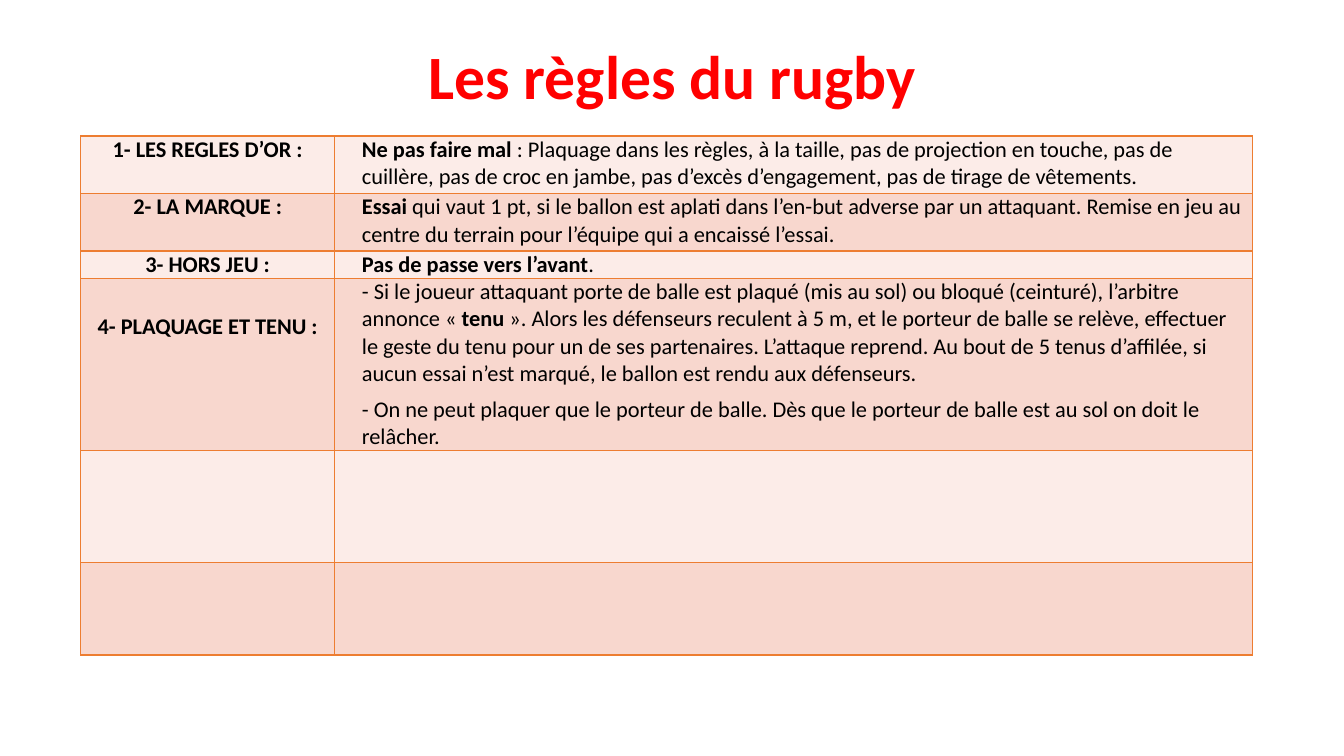
from lxml.etree import SubElement as add_element
from pptx import Presentation
from pptx.dml.color import RGBColor
from pptx.enum.text import MSO_ANCHOR as Anchor, PP_ALIGN as Align
from pptx.oxml.ns import qn
from pptx.util import Pt

PX = 9144
FONT = "Calibri"
COLORS = {
    "title": "FF0000",
    "text": "000000",
    "border": "ED7D31",
    "light": "FCECE8",
    "dark": "F8D7CE",
}
COLUMN_WIDTHS = [252, 910]
ROW_HEIGHTS = [57, 57, 27, 171, 111, 92]
TENU_ROW = 3
RULES = [
    ("1- LES REGLES D’OR :", [
        "**Ne pas faire mal** : Plaquage dans les règles, à la taille, pas de projection "
        "en touche, pas de cuillère, pas de croc en jambe, pas d’excès d’engagement, "
        "pas de tirage de vêtements."]),
    ("2- LA MARQUE :", [
        "**Essai** qui vaut 1 pt, si le ballon est aplati dans l’en-but adverse par un "
        "attaquant. Remise en jeu au centre du terrain pour l’équipe qui a encaissé l’essai."]),
    ("3- HORS JEU :", ["**Pas de passe vers l’avant**."]),
    ("4- PLAQUAGE ET TENU :", [
        "- Si le joueur attaquant porte de balle est plaqué (mis au sol) ou bloqué "
        "(ceinturé), l’arbitre annonce « **tenu** ». Alors les défenseurs reculent à 5 m, "
        "et le porteur de balle se relève, effectuer le geste du tenu pour un de ses "
        "partenaires. L’attaque reprend. Au bout de 5 tenus d’affilée, si aucun essai "
        "n’est marqué, le ballon est rendu aux défenseurs.",
        "- On ne peut plaquer que le porteur de balle. Dès que le porteur de balle est au "
        "sol on doit le relâcher."]),
]


def color(name):
    """Return the named colour."""
    return RGBColor.from_string(COLORS[name])


def add_runs(paragraph, marked_text, size, color_name):
    """Fill a paragraph, with bold between double asterisks."""
    for index, part in enumerate(marked_text.split("**")):
        if part:
            run = paragraph.add_run()
            run.text = part
            run.font.name = FONT
            run.font.size = Pt(size)
            run.font.bold = index % 2 == 1
            run.font.color.rgb = color(color_name)


def add_title(slide, text):
    """Add the centred slide title."""
    shape = slide.shapes.add_textbox(92 * PX, 40 * PX, 1150 * PX, 78 * PX)
    frame = shape.text_frame
    frame.word_wrap = True
    frame.vertical_anchor = Anchor.MIDDLE
    paragraph = frame.paragraphs[0]
    paragraph.alignment = Align.CENTER
    paragraph.line_spacing = 0.9
    add_runs(paragraph, f"**{text}**", 44, "title")


def style_cell(cell, fill_name):
    """Set the borders, fill and margins of a cell."""
    properties = cell._tc.get_or_add_tcPr()
    for side in ("lnL", "lnR", "lnT", "lnB"):
        line = add_element(properties, qn(f"a:{side}"), w=str(Pt(1)))
        fill = add_element(line, qn("a:solidFill"))
        add_element(fill, qn("a:srgbClr"), val=COLORS["border"])
    cell.fill.solid()
    cell.fill.fore_color.rgb = color(fill_name)
    cell.margin_left = cell.margin_right = 7 * PX
    cell.margin_top = cell.margin_bottom = 0


def write_cell(cell, texts, alignment, indent):
    """Write one paragraph per text into a cell."""
    frame = cell.text_frame
    for index, text in enumerate(texts):
        paragraph = frame.add_paragraph() if index else frame.paragraphs[0]
        paragraph.alignment = alignment
        paragraph.space_before = Pt(6)
        paragraph._p.get_or_add_pPr().set("marL", str(indent * PX))
        add_runs(paragraph, text, 16, "text")


def add_rules_table(slide):
    """Add the table of rules with its alternating rows."""
    frame = slide.shapes.add_table(
        len(ROW_HEIGHTS), len(COLUMN_WIDTHS), 80 * PX, 135 * PX,
        sum(COLUMN_WIDTHS) * PX, sum(ROW_HEIGHTS) * PX)
    table = frame.table
    table.first_row = table.horz_banding = False
    for column, width in zip(table.columns, COLUMN_WIDTHS):
        column.width = width * PX
    for index, (row, height) in enumerate(zip(table.rows, ROW_HEIGHTS)):
        row.height = height * PX
        for cell in row.cells:
            style_cell(cell, "dark" if index % 2 else "light")
    for index, (heading, details) in enumerate(RULES):
        write_cell(table.cell(index, 0), [f"**{heading}**"], Align.CENTER, 0)
        write_cell(table.cell(index, 1), details, Align.LEFT, 20)
    table.cell(TENU_ROW, 0).margin_top = 35 * PX


def main():
    """Build and save the presentation."""
    presentation = Presentation()
    presentation.slide_width = 1333 * PX
    presentation.slide_height = 750 * PX
    slide = presentation.slides.add_slide(presentation.slide_layouts[6])
    add_title(slide, "Les règles du rugby")
    add_rules_table(slide)
    presentation.save("out.pptx")


if __name__ == "__main__":
    main()
